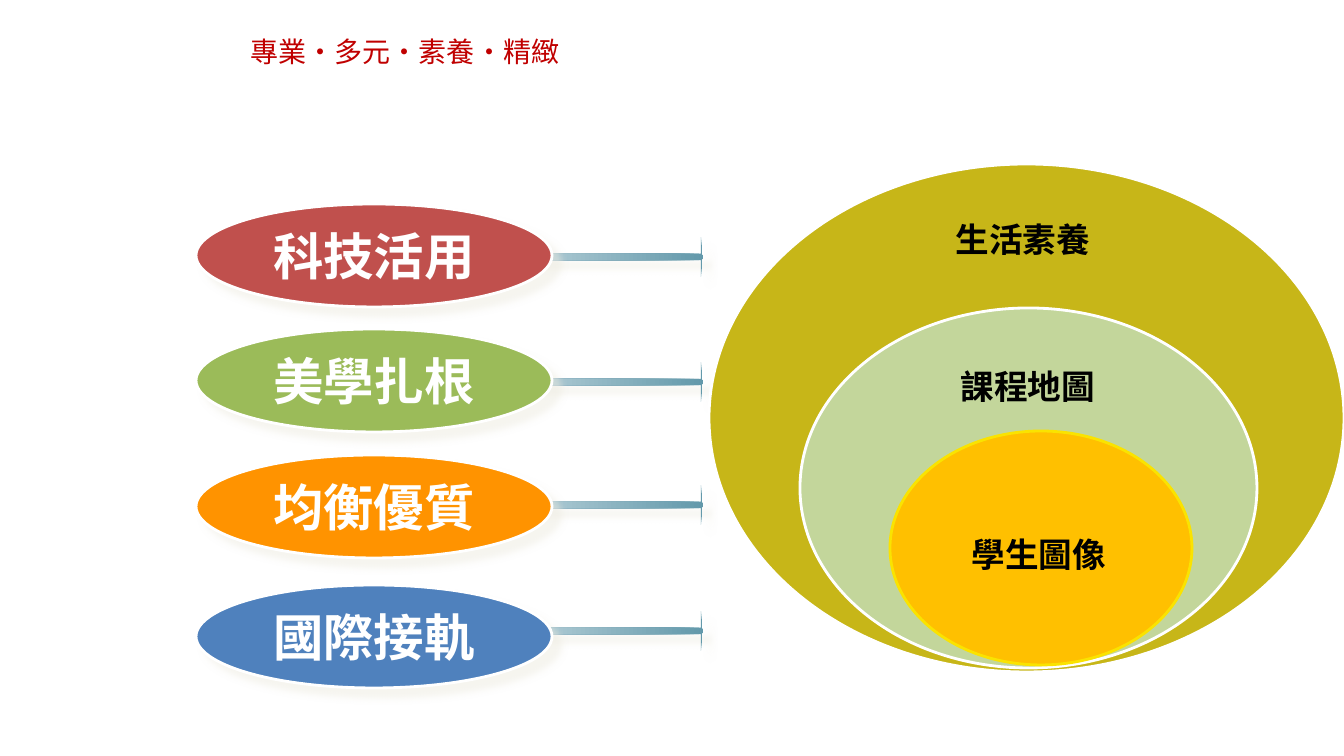
from dataclasses import dataclass

from lxml.etree import SubElement
from pptx import Presentation
from pptx.dml.color import RGBColor
from pptx.enum.shapes import MSO_SHAPE as Preset
from pptx.enum.text import MSO_ANCHOR as Anchor, MSO_AUTO_SIZE as AutoSize, PP_ALIGN as Align
from pptx.oxml.ns import qn
from pptx.util import Emu, Pt

EMU_PER_PX = 914400 / 100.8


@dataclass(frozen=True)
class Theme:
    latin_font: str = "Arial"
    cjk_font: str = "Noto Sans CJK TC"
    white: str = "FFFFFF"
    black: str = "000000"
    motto: str = "C00000"
    red: str = "C0504D"
    green: str = "9BBB59"
    orange: str = "FF9300"
    blue: str = "4F81BD"
    olive: str = "C7B618"
    pale_green: str = "C3D69B"
    gold: str = "FFC000"
    yellow: str = "FAE300"
    arrow_dark: str = "6399AB"
    arrow_light: str = "BAD2DA"
    shadow: str = "EEECE1"
    motto_size: int = 20
    label_size: int = 24
    goal_size: int = 36
    outline: int = 2


def px(length):
    return Emu(round(length * EMU_PER_PX))


def rgb(color):
    return RGBColor.from_string(color)


class SlideBuilder:
    def __init__(self, presentation, theme):
        self.theme = theme
        self.slide = presentation.slides.add_slide(presentation.slide_layouts[5])

    def add_text(self, frame, text, size, color, font, bold=False):
        frame.word_wrap = True
        frame.auto_size = AutoSize.NONE
        paragraph = frame.paragraphs[0]
        paragraph.alignment = Align.CENTER
        run = paragraph.add_run()
        run.text = text
        run.font.name = font
        run.font.size = Pt(size)
        run.font.bold = bold
        run.font.color.rgb = rgb(color)
        SubElement(run.font._element, qn("a:ea"), typeface=self.theme.cjk_font)

    def title(self, text, left, top, width, height):
        shape = self.slide.shapes.title
        shape.left, shape.top, shape.width, shape.height = map(px, (left, top, width, height))
        shape.fill.solid()
        shape.fill.fore_color.rgb = rgb(self.theme.white)
        shape.text_frame.vertical_anchor = Anchor.TOP
        self.add_text(shape.text_frame, text, self.theme.motto_size, self.theme.motto,
                      self.theme.cjk_font)

    def label(self, text, left, top, width=216, height=50):
        box = self.slide.shapes.add_textbox(*map(px, (left, top, width, height)))
        self.add_text(box.text_frame, text, self.theme.label_size, self.theme.black,
                      self.theme.cjk_font, bold=True)

    def cast_shadow(self, shape):
        effects = shape._element.spPr.find(qn("a:effectLst"))
        shadow = SubElement(effects, qn("a:outerShdw"), blurRad=str(Pt(5)), dist=str(Pt(8.5)),
                            dir=str(45 * 60000), algn="tl", rotWithShape="0")
        color = SubElement(shadow, qn("a:srgbClr"), val=self.theme.shadow)
        SubElement(color, qn("a:alpha"), val="50000")

    def ellipse(self, left, top, width, height, fill, line):
        shape = self.slide.shapes.add_shape(Preset.OVAL, *map(px, (left, top, width, height)))
        shape.shadow.inherit = False
        shape.fill.solid()
        shape.fill.fore_color.rgb = rgb(fill)
        shape.line.color.rgb = rgb(line)
        shape.line.width = Pt(self.theme.outline)
        return shape

    def goal(self, text, top, fill):
        shape = self.ellipse(196, top, 356, 103, fill, self.theme.white)
        self.cast_shadow(shape)
        frame = shape.text_frame
        frame.margin_left = frame.margin_right = frame.margin_top = frame.margin_bottom = px(5)
        frame.vertical_anchor = Anchor.MIDDLE
        self.add_text(frame, text, self.theme.goal_size, self.theme.white,
                      self.theme.latin_font, bold=True)

    def arrow(self, top):
        shape = self.slide.shapes.add_shape(Preset.RIGHT_ARROW, *map(px, (515, top, 188, 40)))
        shape.adjustments[0] = 0.16
        shape.adjustments[1] = 0.05
        shape.shadow.inherit = False
        self.cast_shadow(shape)
        shape.line.fill.background()
        shape.fill.gradient()
        shape.fill.gradient_angle = 180
        colors = (self.theme.arrow_dark, self.theme.arrow_light)
        for position, (stop, color) in enumerate(zip(shape.fill.gradient_stops, colors)):
            stop.position = position
            stop.color.rgb = rgb(color)


def main():
    theme = Theme()
    presentation = Presentation()
    presentation.slide_width, presentation.slide_height = px(1344), px(756)
    builder = SlideBuilder(presentation, theme)

    # Motto
    builder.title("專業‧多元‧素養‧精緻", 180, 29, 450, 44)

    # Four goals, each with its arrow behind the ellipse
    goals = [
        ("科技活用", 204, 237, theme.red),
        ("美學扎根", 329, 362, theme.green),
        ("均衡優質", 455, 485, theme.orange),
        ("國際接軌", 585, 611, theme.blue),
    ]
    for text, goal_top, arrow_top, fill in goals:
        builder.arrow(arrow_top)
        builder.goal(text, goal_top, fill)

    # Nested ellipses, from the outermost inwards
    builder.ellipse(709, 164, 635, 508, theme.olive, theme.white)
    builder.ellipse(800, 308, 457, 360, theme.pale_green, theme.white)
    builder.ellipse(890, 431, 302, 234, theme.gold, theme.yellow)

    # Names of the nested ellipses
    builder.label("生活素養", 915, 214)
    builder.label("課程地圖", 920, 361)
    builder.label("學生圖像", 931, 529)

    presentation.save("out.pptx")


if __name__ == "__main__":
    main()
